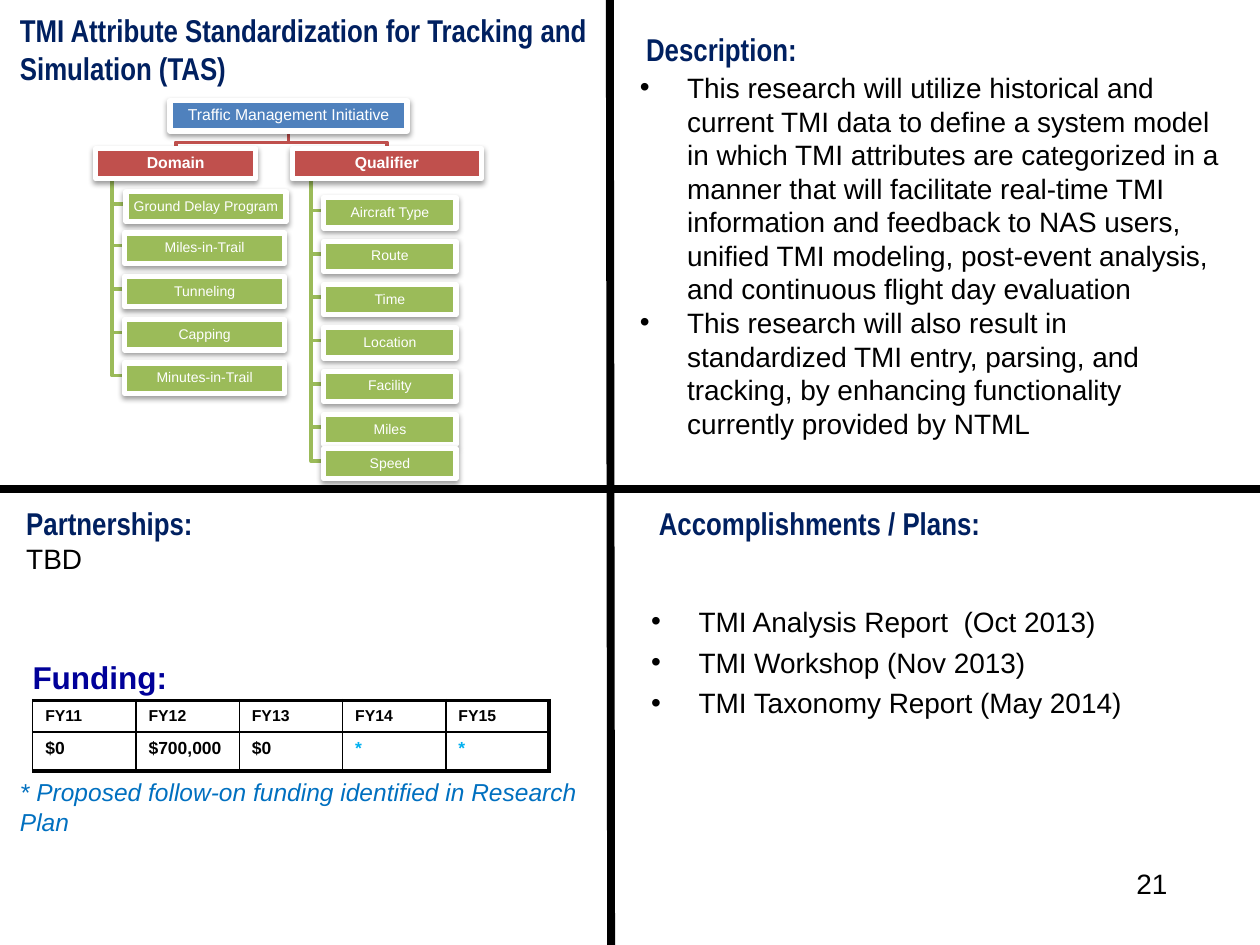
from dataclasses import dataclass

import lxml.etree
import pptx
import pptx.util
import pptx.dml.color
import pptx.enum.shapes
import pptx.enum.text
import pptx.oxml
import pptx.oxml.ns

Pt = pptx.util.Pt
qn = pptx.oxml.ns.qn
CENTER = pptx.enum.text.PP_ALIGN.CENTER
MIDDLE = pptx.enum.text.MSO_ANCHOR.MIDDLE

# The slide is a grid of 100 columns by 75 rows of square units.
UNIT = pptx.util.Inches(0.1)
COLUMNS, ROWS = 100, 75
MIDDLE_ROW = 38.8
NODE_HEIGHT = 2.4

BLACK, WHITE, NAVY = "000000", "FFFFFF", "002060"
BLUE, RED, GREEN = "4F81BD", "C0504D", "9BBB59"


@dataclass
class Style:
    size: float
    color: str = BLACK
    font: str = "Arial"
    bold: bool = False
    italic: bool = False


@dataclass
class Block:
    """A text box; each line is a text with its style."""
    left: float
    top: float
    width: float
    height: float
    lines: list[tuple[str, Style]]
    indent: float = 0
    hanging: float = 0
    bullet: bool = False
    gap: float = 0


@dataclass
class Branch:
    heading: str
    left: float
    width: float
    trunk: float
    leaf_width: float
    leaves: list[tuple[str, float, float]]  # label, left, top


HEADING = Style(18, NAVY, "Arial Narrow", bold=True)
BODY = Style(16)

BLOCKS = [
    Block(1.1, 39.5, 46.8, 6.7, [("Partnerships:", HEADING), ("TBD", BODY)], 0.6, 0.6),
    Block(1.6, 51.7, 41.2, 4, [("Funding:", Style(18, "000099", bold=True))], 0.6, 0.6),
    Block(51.3, 39.5, 46.8, 4, [("Accomplishments / Plans:", HEADING)], 0.6, 0.6),
    Block(0.6, 0.4, 48, 7.1,
          [("TMI Attribute Standardization for Tracking and Simulation (TAS)", HEADING)]),
    Block(50.3, 1.9, 48.7, 4, [("Description:", HEADING)]),
    Block(50.7, 47.5, 47.9, 11.4,
          [("TMI Analysis Report  (Oct 2013)", BODY),
           ("TMI Workshop (Nov 2013)", BODY),
           ("TMI Taxonomy Report (May 2014)", BODY)], 3.75, 3.75, True, 4),
    Block(49.8, 5.1, 48.4, 32.2,
          [("This research will utilize historical and current TMI data to define a system "
            "model in which TMI attributes are categorized in a manner that will facilitate "
            "real-time TMI information and feedback to NAS users, unified TMI modeling, "
            "post-event analysis, and continuous flight day evaluation", BODY),
           ("This research will also result in standardized TMI entry, parsing, and tracking, "
            "by enhancing functionality currently provided by NTML", BODY)], 3.75, 3.75, True),
    Block(89.2, 68.3, 5.8, 5.2, [("21", BODY)]),
    Block(0, 61.2, 48.5, 6.4,
          [("* Proposed follow-on funding identified in Research Plan",
            Style(14, "0070C0", italic=True))], 0.6),
]

DOMAINS = ["Miles-in-Trail", "Tunneling", "Capping", "Minutes-in-Trail"]
QUALIFIERS = ["Aircraft Type", "Route", "Time", "Location", "Facility", "Miles"]
BRANCHES = [
    Branch("Domain", 7.6, 12.7, 8.9, 12.7,
           [("Ground Delay Program", 10, 15.2)]
           + [(label, 9.9, 18.5 + 3.44 * row) for row, label in enumerate(DOMAINS)]),
    Branch("Qualifier", 23.2, 15, 24.7, 10.5,
           [(label, 25.7, 15.7 + 3.44 * row) for row, label in enumerate(QUALIFIERS)]
           + [("Speed", 25.7, 35.6)]),
]

FUNDING = [["FY11", "FY12", "FY13", "FY14", "FY15"],
           ["$0", "$700,000", "$0", "*", "*"]]


def units(value: float) -> int:
    return round(value * UNIT)


def rgb(color: str) -> pptx.dml.color.RGBColor:
    return pptx.dml.color.RGBColor.from_string(color)


def write(para, text: str, style: Style) -> None:
    para.text = text
    for span in para.runs:
        font = span.font
        font.name, font.size = style.font, Pt(style.size)
        font.bold, font.italic = style.bold, style.italic
        font.color.rgb = rgb(style.color)


def add_block(page, block: Block) -> None:
    box = page.shapes.add_textbox(*map(units, (block.left, block.top, block.width, block.height)))
    frame = box.text_frame
    frame.word_wrap = True
    for index, (text, style) in enumerate(block.lines):
        para = frame.add_paragraph() if index else frame.paragraphs[0]
        properties = para._p.get_or_add_pPr()
        properties.set("marL", str(units(block.indent)))
        properties.set("indent", str(-units(block.hanging)))
        if index and block.gap:
            para.space_before = Pt(block.gap)
        if block.bullet:
            lxml.etree.SubElement(properties, qn("a:buFont")).set("typeface", "Arial")
            lxml.etree.SubElement(properties, qn("a:buChar")).set("char", "•")
        write(para, text, style)


def add_divider(page, *ends: float) -> None:
    line = page.shapes.add_connector(pptx.enum.shapes.MSO_CONNECTOR.STRAIGHT, *map(units, ends))
    line.line.color.rgb = rgb(BLACK)
    line.line.width = Pt(4.5)
    lxml.etree.SubElement(line._element.spPr, qn("a:effectLst"))


def add_path(page, color: str, *points: tuple[float, float]) -> None:
    start, *rest = [(units(x), units(y)) for x, y in points]
    builder = page.shapes.build_freeform(*start, scale=1.0)
    builder.add_line_segments(rest, close=False)
    path = builder.convert_to_shape()
    path.fill.background()
    path.line.color.rgb = rgb(color)
    path.line.width = Pt(2)
    path.shadow.inherit = False


def add_node(page, label: str, left: float, top: float, width: float,
             fill: str, style: Style) -> None:
    node = page.shapes.add_shape(pptx.enum.shapes.MSO_SHAPE.RECTANGLE,
                                 *map(units, (left, top, width, NODE_HEIGHT)))
    node.fill.solid()
    node.fill.fore_color.rgb = rgb(fill)
    node.line.color.rgb = rgb(WHITE)
    node.line.width = Pt(3)
    node.shadow.inherit = False
    node._element.spPr.find(qn("a:effectLst")).append(pptx.oxml.parse_xml(
        f'<a:outerShdw {pptx.oxml.ns.nsdecls("a")} blurRad="40000" dist="20000" dir="5400000" '
        'rotWithShape="0"><a:srgbClr val="000000"><a:alpha val="38000"/></a:srgbClr>'
        '</a:outerShdw>'))
    frame = node.text_frame
    frame.margin_left = frame.margin_right = frame.margin_top = frame.margin_bottom = units(0.1)
    frame.vertical_anchor = MIDDLE
    frame.word_wrap = True
    para = frame.paragraphs[0]
    para.alignment = CENTER
    para.line_spacing = 0.9
    write(para, label, style)


def add_tree(page) -> None:
    root_left, root_top, root_width, branch_top = 13.5, 8, 18.8, 11.8
    root_center = root_left + root_width / 2
    for branch in reversed(BRANCHES):
        for _, left, top in reversed(branch.leaves):
            joint = top + NODE_HEIGHT / 2 - 0.2
            add_path(page, GREEN, (branch.trunk, branch_top + NODE_HEIGHT),
                     (branch.trunk, joint), (left, joint))
        center = branch.left + branch.width / 2
        add_path(page, RED, (root_center, root_top + NODE_HEIGHT), (root_center, 11.3),
                 (center, 11.3), (center, branch_top))
    add_node(page, "Traffic Management Initiative", root_left, root_top, root_width,
             BLUE, Style(9, WHITE))
    for branch in BRANCHES:
        add_node(page, branch.heading, branch.left, branch_top, branch.width,
                 RED, Style(9, WHITE, bold=True))
        for label, left, top in branch.leaves:
            add_node(page, label, left, top, branch.leaf_width, GREEN, Style(8, WHITE))


def add_border(cell, side: str, width: float) -> None:
    cell._tc.get_or_add_tcPr().append(pptx.oxml.parse_xml(
        f'<a:{side} {pptx.oxml.ns.nsdecls("a")} w="{Pt(width)}"><a:solidFill>'
        f'<a:srgbClr val="{BLACK}"/></a:solidFill></a:{side}>'))


def add_funding(page) -> None:
    rows, columns = len(FUNDING), len(FUNDING[0])
    table = page.shapes.add_table(rows, columns, *map(units, (2.6, 55.6, 41, 5.5))).table
    table.first_row = table.horz_banding = False
    for row, height in zip(table.rows, (2.4, 3.1)):
        row.height = units(height)
    for r, values in enumerate(FUNDING):
        for c, value in enumerate(values):
            cell = table.cell(r, c)
            add_border(cell, "lnL", 1)
            add_border(cell, "lnR", 2.25 if c == columns - 1 else 1)
            add_border(cell, "lnT", 2.25 if r == 0 else 1)
            add_border(cell, "lnB", 2.25 if r == rows - 1 else 1)
            cell.fill.background()
            write(cell.text_frame.paragraphs[0], value,
                  Style(10 if r else 9, "00B0F0" if value == "*" else BLACK, bold=True))


def main() -> None:
    deck = pptx.Presentation()
    deck.slide_width, deck.slide_height = units(COLUMNS), units(ROWS)
    page = deck.slides.add_slide(deck.slide_layouts[6])
    add_divider(page, 48.4, 0, 48.5, ROWS)
    add_divider(page, 0, MIDDLE_ROW, 49.2, MIDDLE_ROW)
    add_divider(page, 49.2, MIDDLE_ROW, COLUMNS, MIDDLE_ROW)
    for block in BLOCKS:
        add_block(page, block)
    add_tree(page)
    add_funding(page)
    deck.save("out.pptx")


if __name__ == "__main__":
    main()
